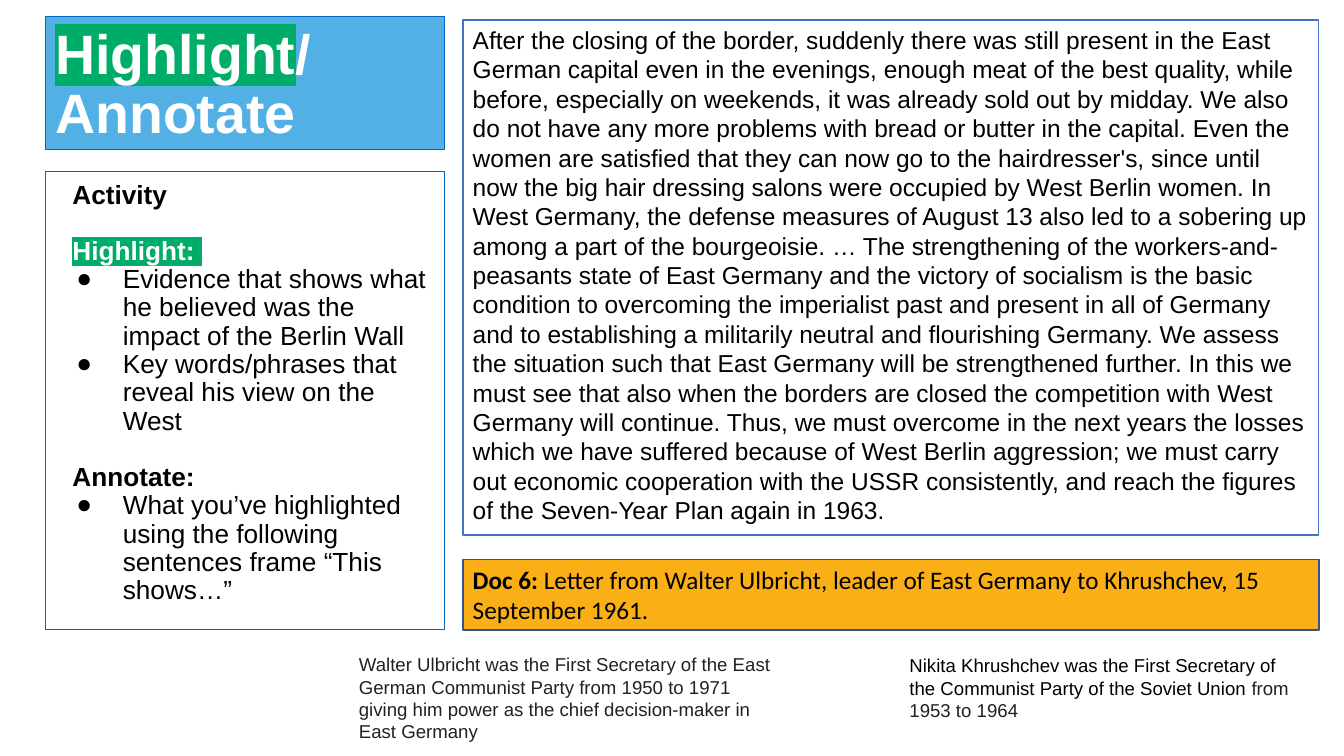
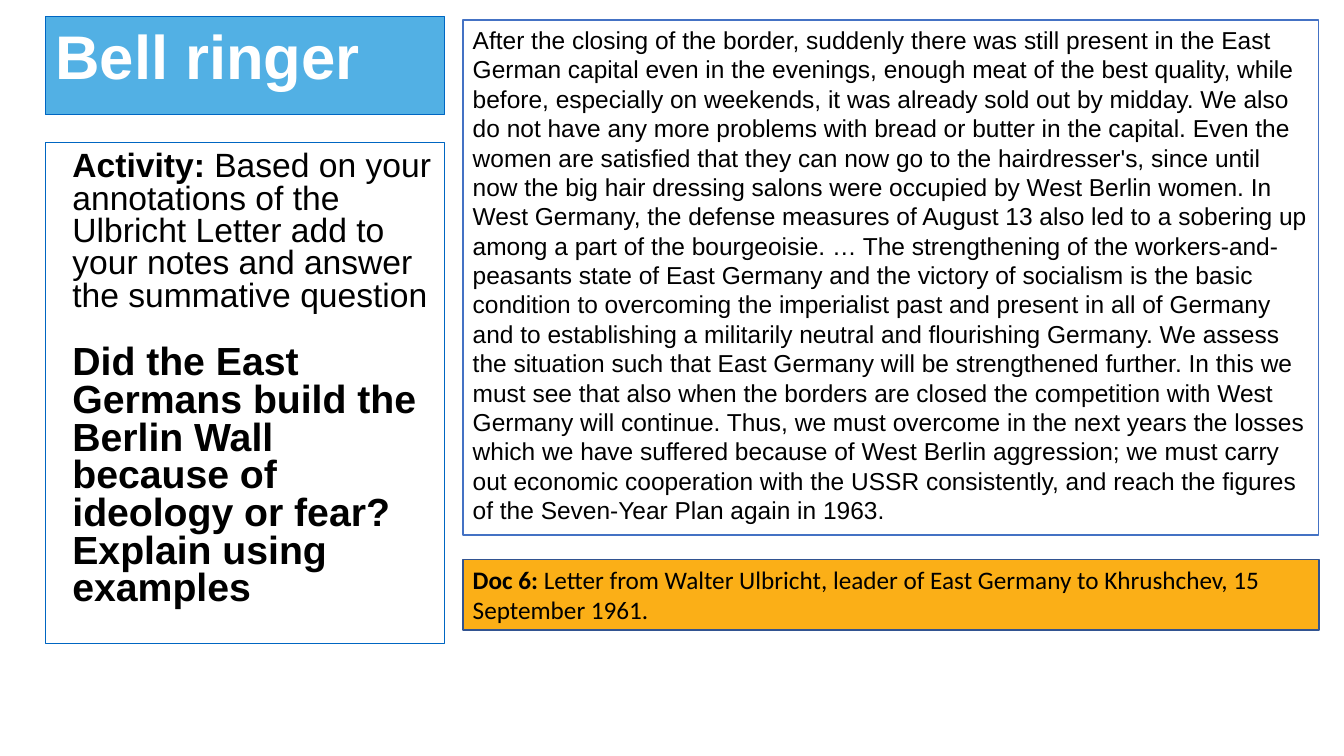
from dataclasses import dataclass

from lxml.etree import SubElement, Element
from pptx import Presentation
from pptx.dml.color import RGBColor
from pptx.enum.shapes import MSO_SHAPE
from pptx.enum.text import MSO_ANCHOR, MSO_AUTO_SIZE, PP_ALIGN
from pptx.oxml.ns import qn
from pptx.util import Inches, Pt


@dataclass(frozen=True)
class Theme:
    white: str = "FFFFFF"
    black: str = "000000"
    sky: str = "52B0E4"
    edge: str = "0066C2"
    passage_edge: str = "4472C4"
    amber: str = "FBAF17"
    amber_edge: str = "325491"
    marker: str = "00AD68"
    ink: str = "202122"
    sans: str = "Arial"
    caption_font: str = "Calibri"
    title_size: float = 39.6
    short_title_size: float = 44
    activity_size: float = 18.7
    task_size: float = 24
    question_size: float = 28
    passage_size: float = 17.5
    caption_size: float = 18
    bio_size: float = 13.3


THEME = Theme()
LEFT_X, LEFT_WIDTH = 0.45, 3.96
RIGHT_X, RIGHT_WIDTH = 4.59, 8.49
TITLE_TOP = 0.16

PASSAGE_SENTENCES = (
    "After the closing of the border, suddenly there was still present in the East German "
    "capital even in the evenings, enough meat of the best quality, while before, especially "
    "on weekends, it was already sold out by midday.",
    "We also do not have any more problems with bread or butter in the capital.",
    "Even the women are satisfied that they can now go to the hairdresser's, since until now "
    "the big hair dressing salons were occupied by West Berlin women.",
    "In West Germany, the defense measures of August 13 also led to a sobering up among a "
    "part of the bourgeoisie. …",
    "The strengthening of the workers-and-peasants state of East Germany and the victory of "
    "socialism is the basic condition to overcoming the imperialist past and present in all "
    "of Germany and to establishing a militarily neutral and flourishing Germany.",
    "We assess the situation such that East Germany will be strengthened further.",
    "In this we must see that also when the borders are closed the competition with West "
    "Germany will continue.",
    "Thus, we must overcome in the next years the losses which we have suffered because of "
    "West Berlin aggression; we must carry out economic cooperation with the USSR "
    "consistently, and reach the figures of the Seven-Year Plan again in 1963.",
)


def set_all(target, values):
    for attribute, value in values.items():
        setattr(target, attribute, value)


def place(shape, left, top, width, height):
    set_all(shape, {"left": Inches(left), "top": Inches(top),
                    "width": Inches(width), "height": Inches(height)})


def paint(shape, fill, edge, weight):
    shape.shadow.inherit = False
    if fill:
        shape.fill.solid()
        shape.fill.fore_color.rgb = RGBColor.from_string(fill)
    else:
        shape.fill.background()
    shape.line.color.rgb = RGBColor.from_string(edge)
    shape.line.width = Pt(weight)


def frame_text(shape, side=0.1, vertical=0.1, anchor=MSO_ANCHOR.TOP):
    frame = shape.text_frame
    set_all(frame, {
        "word_wrap": True, "auto_size": MSO_AUTO_SIZE.NONE, "vertical_anchor": anchor,
        "margin_left": Inches(side), "margin_right": Inches(side),
        "margin_top": Inches(vertical), "margin_bottom": Inches(vertical)})
    return frame


def add_run(paragraph, text, size, bold=False, color=THEME.black, name=THEME.sans,
            highlight=None):
    run = paragraph.add_run()
    run.text = text
    set_all(run.font, {"size": Pt(size), "bold": bold, "name": name})
    run.font.color.rgb = RGBColor.from_string(color)
    if highlight:
        marker = Element(qn("a:highlight"))
        SubElement(marker, qn("a:srgbClr"), val=highlight)
        run._r.get_or_add_rPr().find(qn("a:solidFill")).addnext(marker)


def format_paragraph(paragraph, spacing=1.0, before=0, margin=0.0, bullet=False):
    properties = paragraph._p.get_or_add_pPr()
    properties.set("marL", str(Inches(0.67 if bullet else margin)))
    properties.set("indent", str(Inches(-0.46 if bullet else 0)))
    if bullet:
        color = SubElement(properties, qn("a:buClr"))
        SubElement(color, qn("a:srgbClr"), val=THEME.black)
        SubElement(properties, qn("a:buFont"), typeface=THEME.sans)
        SubElement(properties, qn("a:buChar"), char="●")
    set_all(paragraph, {"alignment": PP_ALIGN.LEFT, "line_spacing": spacing,
                        "space_before": Pt(before), "space_after": Pt(0)})


def add_title(slide, height, size, lines):
    title = slide.shapes.title
    place(title, LEFT_X, TITLE_TOP, LEFT_WIDTH, height)
    paint(title, THEME.sky, THEME.edge, 0.75)
    paragraph = frame_text(title).paragraphs[0]
    format_paragraph(paragraph, 0.9)
    for index, line in enumerate(lines):
        if index:
            paragraph.add_line_break()
        for text, highlight in line:
            add_run(paragraph, text, size, True, THEME.white, highlight=highlight)


def add_panel(slide, kind, box, fill, edge, weight):
    panel = slide.shapes.add_shape(kind, *map(Inches, box))
    paint(panel, fill, edge, weight)
    return panel


def add_activity(slide, top, height, spacing, paragraphs):
    panel = add_panel(slide, MSO_SHAPE.RECTANGLE, (LEFT_X, top, LEFT_WIDTH, height),
                      None, THEME.edge, 0.75)
    frame = frame_text(panel)
    for index, (layout, runs) in enumerate(paragraphs):
        paragraph = frame.add_paragraph() if index else frame.paragraphs[0]
        format_paragraph(paragraph, spacing, margin=0.17, **layout)
        for run in runs:
            add_run(paragraph, **run)


def add_source_document(slide):
    passage = add_panel(slide, MSO_SHAPE.RECTANGLE, (RIGHT_X, 0.2, RIGHT_WIDTH, 5.11),
                        THEME.white, THEME.passage_edge, 1)
    paragraph = frame_text(passage, vertical=0.05).paragraphs[0]
    format_paragraph(paragraph)
    add_run(paragraph, " ".join(PASSAGE_SENTENCES), THEME.passage_size)

    caption = add_panel(slide, MSO_SHAPE.FLOWCHART_PROCESS,
                        (RIGHT_X, 5.55, RIGHT_WIDTH, 0.7),
                        THEME.amber, THEME.amber_edge, 1)
    paragraph = frame_text(caption, vertical=0.05, anchor=MSO_ANCHOR.MIDDLE).paragraphs[0]
    format_paragraph(paragraph)
    for text, bold in (
        ("Doc 6: ", True),
        ("Letter from Walter Ulbricht, leader of East Germany to Khrushchev, "
         "15 September 1961.", False),
    ):
        add_run(paragraph, text, THEME.caption_size, bold, name=THEME.caption_font)


def add_bio(slide, box, runs):
    bio = slide.shapes.add_textbox(*map(Inches, box))
    paragraph = frame_text(bio, 0.13, 0.13).paragraphs[0]
    format_paragraph(paragraph)
    for text, color in runs:
        add_run(paragraph, text, THEME.bio_size, color=color)


def new_slide(deck):
    return deck.slides.add_slide(deck.slide_layouts[5])


def build_annotate_slide(deck):
    slide = new_slide(deck)
    add_title(slide, 1.32, THEME.title_size,
              [[("Highlight", THEME.marker), ("/", None)], [("Annotate", None)]])
    size = THEME.activity_size
    heading = {"size": size, "bold": True}
    marked = {**heading, "color": THEME.white, "highlight": THEME.marker}
    gap, item = {"before": 20}, {"bullet": True}
    add_activity(slide, 1.7, 4.55, 0.9, [
        ({}, [{"text": "Activity", **heading}]),
        (gap, [{"text": "Highlight: ", **marked}]),
        (item, [{"text": "Evidence that shows what he believed was the impact "
                         "of the Berlin Wall", "size": size}]),
        (item, [{"text": "Key words/phrases that reveal his view on the West",
                 "size": size}]),
        (gap, [{"text": "Annotate:", **heading}]),
        (item, [{"text": "What you’ve highlighted using the following sentences "
                         "frame “This shows…”", "size": size}]),
    ])
    add_source_document(slide)
    add_bio(slide, (3.43, 6.35, 4.37, 1.15), [
        ("Walter Ulbricht was the First Secretary of the East German Communist Party "
         "from 1950 to 1971 giving him power as the chief decision-maker in East Germany",
         THEME.ink)])
    add_bio(slide, (8.89, 6.36, 4.2, 0.94), [
        ("Nikita Khrushchev was the First Secretary of the Communist Party of the "
         "Soviet Union", THEME.black),
        (" from 1953 to 1964", THEME.ink)])


def build_bell_ringer_slide(deck):
    slide = new_slide(deck)
    add_title(slide, 0.98, THEME.short_title_size, [[("Bell ringer", None)]])
    add_activity(slide, 1.41, 4.97, 0.8, [
        ({}, [
            {"text": "Activity: ", "size": THEME.task_size, "bold": True},
            {"text": "Based on your annotations of the Ulbricht Letter add to your "
                     "notes and answer the summative question", "size": THEME.task_size},
        ]),
        ({"before": 23}, [
            {"text": "Did the East Germans build the Berlin Wall because of ideology "
                     "or fear? Explain using examples",
             "size": THEME.question_size, "bold": True},
        ]),
    ])
    add_source_document(slide)


def main():
    deck = Presentation()
    set_all(deck, {"slide_width": Inches(13.33), "slide_height": Inches(7.5)})
    build_annotate_slide(deck)
    build_bell_ringer_slide(deck)
    deck.save("out.pptx")


if __name__ == "__main__":
    main()
